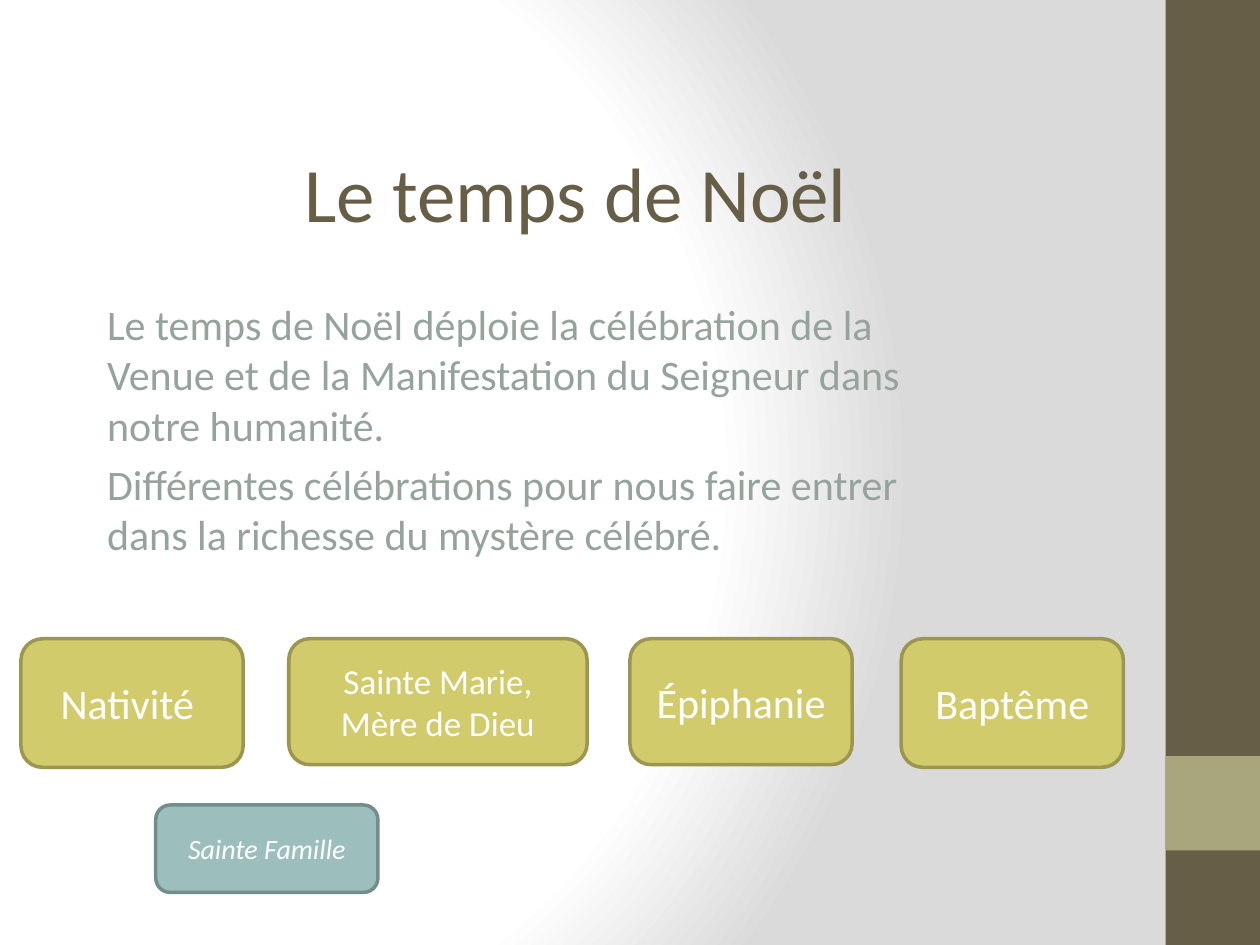
"""Build the slide that presents the celebrations of Christmas time."""
import lxml.etree
import pptx
import pptx.dml.color
import pptx.enum.shapes
import pptx.enum.text
import pptx.oxml.ns
import pptx.util

Pt = pptx.util.Pt
RGBColor = pptx.dml.color.RGBColor
MSO_SHAPE = pptx.enum.shapes.MSO_SHAPE
MSO_ANCHOR = pptx.enum.text.MSO_ANCHOR
MSO_AUTO_SIZE = pptx.enum.text.MSO_AUTO_SIZE
PP_ALIGN = pptx.enum.text.PP_ALIGN

WHITE = RGBColor(0xFF, 0xFF, 0xFF)
GREY = RGBColor(0xDA, 0xDA, 0xDA)
BROWN = RGBColor(0x67, 0x5E, 0x47)
KHAKI = RGBColor(0xA9, 0xA5, 0x7C)
SAGE = RGBColor(0x95, 0xA3, 0x9D)
OLIVE = RGBColor(0xD2, 0xCB, 0x6C)
OLIVE_EDGE = RGBColor(0x9B, 0x96, 0x50)
TEAL = RGBColor(0x9C, 0xBE, 0xBD)
TEAL_EDGE = RGBColor(0x73, 0x8D, 0x8C)

TITLE = "Le temps de Noël"
BODY = [
    "Le temps de Noël déploie la célébration de la Venue et de la "
    "Manifestation du Seigneur dans notre humanité.",
    "Différentes célébrations pour nous faire entrer dans la richesse "
    "du mystère célébré.",
]
FEAST_TOP = 365
FEASTS = [
    ("Nativité ", 12, 127, 73.5, 24),
    ("Sainte Marie, Mère de Dieu", 165, 170.5, 72, 20),
    ("Épiphanie", 360, 127, 72, 24),
    ("Baptême", 515, 127, 73.5, 24),
]


def set_values(target, values):
    """Set each attribute of the target from a dict."""
    for name, value in values.items():
        setattr(target, name, value)


def place(shape, left, top, width, height):
    """Move and size a shape in points."""
    names = ("left", "top", "width", "height")
    set_values(shape, dict(zip(names, map(Pt, (left, top, width, height)))))


def write_text(shape, lines, frame_values, paragraph_values, font_values):
    """Fill a shape with formatted paragraphs."""
    frame = shape.text_frame
    frame.text = "\n".join(lines)
    set_values(frame, frame_values)
    for paragraph in frame.paragraphs:
        set_values(paragraph, paragraph_values)
        for run in paragraph.runs:
            font = run.font
            values = dict(font_values)
            font.color.rgb = values.pop("color")
            set_values(font, {"name": "Calibri", **values})


def paint_background(slide):
    """Give the slide a circular gradient from white to grey."""
    slide.background.fill.solid()
    properties = slide.element.find(".//" + pptx.oxml.ns.qn("p:bgPr"))
    stops = "".join(
        f'<a:gs pos="{position}"><a:srgbClr val="{color}"/></a:gs>'
        for position, color in ((0, WHITE), (75000, WHITE), (100000, GREY))
    )
    gradient = lxml.etree.fromstring(
        f'<a:gradFill {pptx.oxml.ns.nsdecls("a")} rotWithShape="1">'
        f'<a:gsLst>{stops}</a:gsLst><a:path path="circle">'
        '<a:fillToRect l="20000" t="50000" r="100000" b="50000"/>'
        "</a:path></a:gradFill>"
    )
    properties.replace(properties[0], gradient)


def add_block(slide, kind, box, fill, edge=None):
    """Add a filled shape, outlined when an edge colour is given."""
    shape = slide.shapes.add_shape(kind, *map(Pt, box))
    shape.shadow.inherit = False
    shape.fill.solid()
    shape.fill.fore_color.rgb = fill
    if edge is None:
        shape.line.fill.background()
    else:
        shape.line.color.rgb = edge
        shape.line.width = Pt(2)
    return shape


def add_feast(slide, label, box, size, fill, edge, italic=False):
    """Add a rounded box that names a celebration."""
    shape = add_block(slide, MSO_SHAPE.ROUNDED_RECTANGLE, box, fill, edge)
    write_text(
        shape,
        [label],
        {"word_wrap": True, "vertical_anchor": MSO_ANCHOR.MIDDLE},
        {"alignment": PP_ALIGN.CENTER},
        {"size": Pt(size), "color": WHITE, "italic": italic},
    )


def fill_placeholders(slide):
    """Place and write the title and the introduction."""
    title, body = slide.shapes.title, slide.placeholders[1]
    place(title, 165, 69, 328, 67)
    write_text(
        title,
        [TITLE],
        {"word_wrap": False, "vertical_anchor": MSO_ANCHOR.TOP,
         "auto_size": MSO_AUTO_SIZE.SHAPE_TO_FIT_TEXT},
        {"alignment": PP_ALIGN.CENTER, "line_spacing": 1.2},
        {"size": Pt(44), "color": BROWN},
    )
    place(body, 54, 167, 509, 166)
    write_text(
        body,
        BODY,
        {"word_wrap": True, "vertical_anchor": MSO_ANCHOR.TOP,
         "auto_size": MSO_AUTO_SIZE.NONE},
        {"alignment": PP_ALIGN.LEFT, "space_before": Pt(4.8)},
        {"size": Pt(24), "color": SAGE},
    )


def main():
    """Build and save the presentation."""
    presentation = pptx.Presentation()
    set_values(presentation, {"slide_width": Pt(720), "slide_height": Pt(540)})
    slide = presentation.slides.add_slide(presentation.slide_layouts[0])
    paint_background(slide)
    add_block(slide, MSO_SHAPE.RECTANGLE, (666, 0, 54, 540), BROWN)
    add_block(slide, MSO_SHAPE.RECTANGLE, (666, 432, 54, 54), KHAKI)
    fill_placeholders(slide)
    for label, left, width, height, size in FEASTS:
        box = (left, FEAST_TOP, width, height)
        add_feast(slide, label, box, size, OLIVE, OLIVE_EDGE)
    add_feast(slide, "Sainte Famille", (89, 460, 127, 50), 16,
              TEAL, TEAL_EDGE, italic=True)
    presentation.save("out.pptx")


if __name__ == "__main__":
    main()
